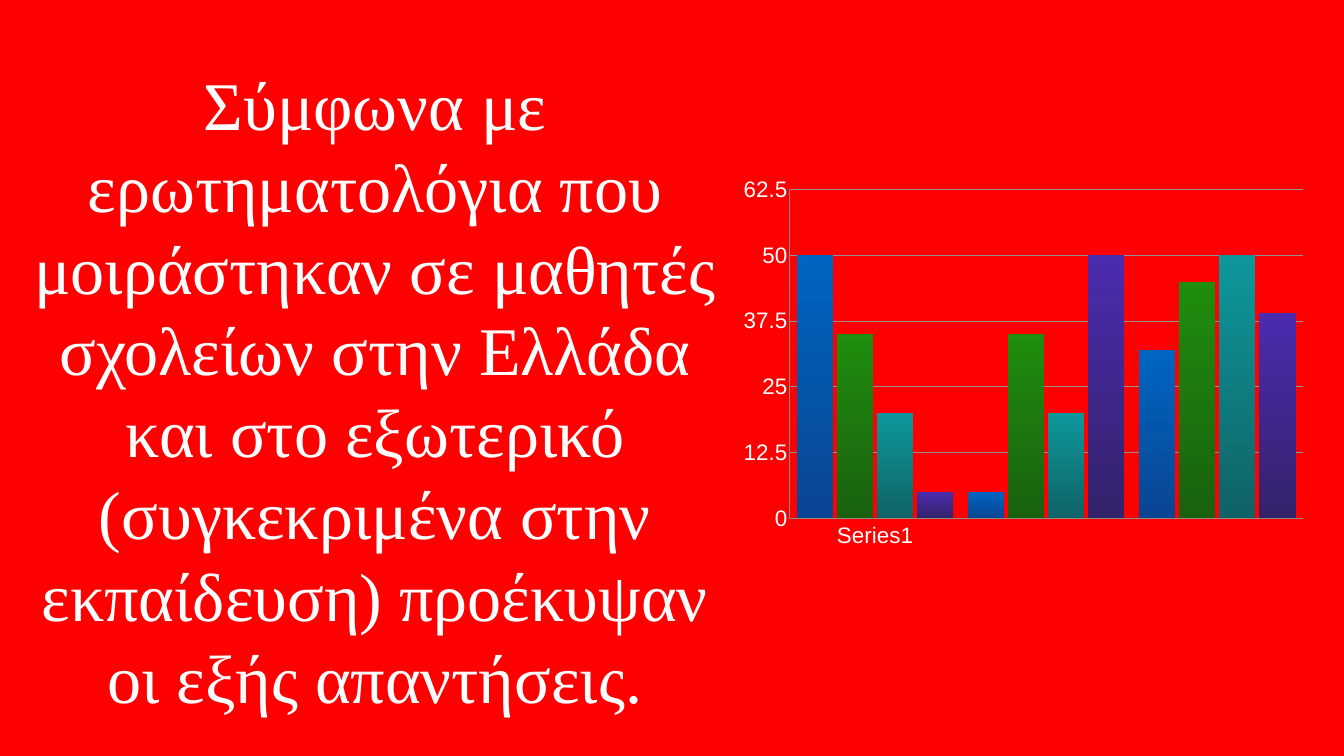
from pptx import Presentation
from pptx.chart.data import CategoryChartData
from pptx.dml.color import RGBColor
from pptx.enum.chart import XL_CHART_TYPE, XL_TICK_LABEL_POSITION, XL_TICK_MARK
from pptx.enum.text import MSO_ANCHOR, PP_ALIGN
from pptx.oxml import parse_xml
from pptx.oxml.ns import nsdecls
from pptx.util import Inches, Pt

STATEMENT = (
    "Σύμφωνα με ερωτηματολόγια που μοιράστηκαν σε μαθητές σχολείων στην "
    "Ελλάδα και στο εξωτερικό (συγκεκριμένα στην εκπαίδευση) προέκυψαν "
    "οι εξής απαντήσεις."
)
CATEGORIES = ["Series1", "", ""]
# name, values, gradient from top to bottom
SERIES = [
    ("Series 1", (50, 5, 32), ("0065C1", "094593")),
    ("Series 2", (35, 35, 45), ("1F8D0E", "1A610F")),
    ("Series 3", (20, 20, 50), ("0E979B", "0F6366")),
    ("Series 4", (5, 50, 39), ("4B2BAE", "34226B")),
]
PLOT = {"x": 0.103, "y": 0.062, "w": 0.892, "h": 0.764}


def rgb(value):
    return RGBColor.from_string(value)


def style_font(font, name, size, color="FFFFFF"):
    font.name = name
    font.size = Pt(size)
    font.color.rgb = rgb(color)


def style_line(line, color):
    line.color.rgb = rgb(color)
    line.width = Pt(1)


def add_statement(s, left, top, width, height):
    tb = s.shapes.add_textbox(Inches(left), Inches(top), Inches(width), Inches(height))
    tf = tb.text_frame
    tf.word_wrap = True
    tf.vertical_anchor = MSO_ANCHOR.MIDDLE
    tf.margin_left = tf.margin_right = tf.margin_top = tf.margin_bottom = Inches(0.06)
    p = tf.paragraphs[0]
    p.alignment = PP_ALIGN.CENTER
    p.line_spacing = Pt(117)
    r = p.add_run()
    r.text = STATEMENT
    style_font(r.font, "Times New Roman", 97.4)


def set_plot_layout(chart):
    plot_area = chart._chartSpace.chart.plotArea
    for old in plot_area.findall("{*}layout"):
        plot_area.remove(old)
    modes = '<c:xMode val="edge"/><c:yMode val="edge"/>'
    sizes = "".join(f'<c:{key} val="{val}"/>' for key, val in PLOT.items())
    plot_area.insert(0, parse_xml(
        f'<c:layout {nsdecls("c")}><c:manualLayout><c:layoutTarget val="inner"/>'
        f"{modes}{sizes}</c:manualLayout></c:layout>"))


def add_answers_chart(s, left, top, width, height):
    data = CategoryChartData()
    data.categories = CATEGORIES
    for name, values, _ in SERIES:
        data.add_series(name, values)
    chart = s.shapes.add_chart(
        XL_CHART_TYPE.COLUMN_CLUSTERED, Inches(left), Inches(top),
        Inches(width), Inches(height), data).chart
    chart.has_title = False
    chart.has_legend = False
    style_font(chart.font, "Arial", 10)
    set_plot_layout(chart)

    # Columns
    plot = chart.plots[0]
    plot.gap_width = 40
    plot.overlap = -10
    plot.vary_by_categories = False
    for series, (_, _, colors) in zip(plot.series, SERIES):
        fill = series.format.fill
        fill.gradient()
        fill.gradient_angle = 270
        for stop, color in zip(fill.gradient_stops, colors):
            stop.color.rgb = rgb(color)
        series.format.line.fill.background()

    # Axes
    for axis in (chart.category_axis, chart.value_axis):
        axis.major_tick_mark = axis.minor_tick_mark = XL_TICK_MARK.NONE
        style_font(axis.tick_labels.font, "Arial", 32)
        style_line(axis.format.line, "8A8B89")
    chart.category_axis.tick_label_position = XL_TICK_LABEL_POSITION.LOW
    value_axis = chart.value_axis
    value_axis.minimum_scale = 0
    value_axis.maximum_scale = 62.5
    value_axis.major_unit = 12.5
    value_axis.tick_labels.number_format = "General"
    value_axis.tick_labels.number_format_is_linked = False
    value_axis.has_major_gridlines = True
    style_line(value_axis.major_gridlines.format.line, "929292")


def main():
    prs = Presentation()
    prs.slide_width = Inches(26.67)
    prs.slide_height = Inches(15)
    s = prs.slides.add_slide(prs.slide_layouts[6])
    s.background.fill.solid()
    s.background.fill.fore_color.rgb = rgb("FF0000")
    add_statement(s, 0.48, 1.47, 13.93, 12.52)
    add_answers_chart(s, 14.49, 3.23, 11.42, 8.54)
    prs.save("out.pptx")


if __name__ == "__main__":
    main()
